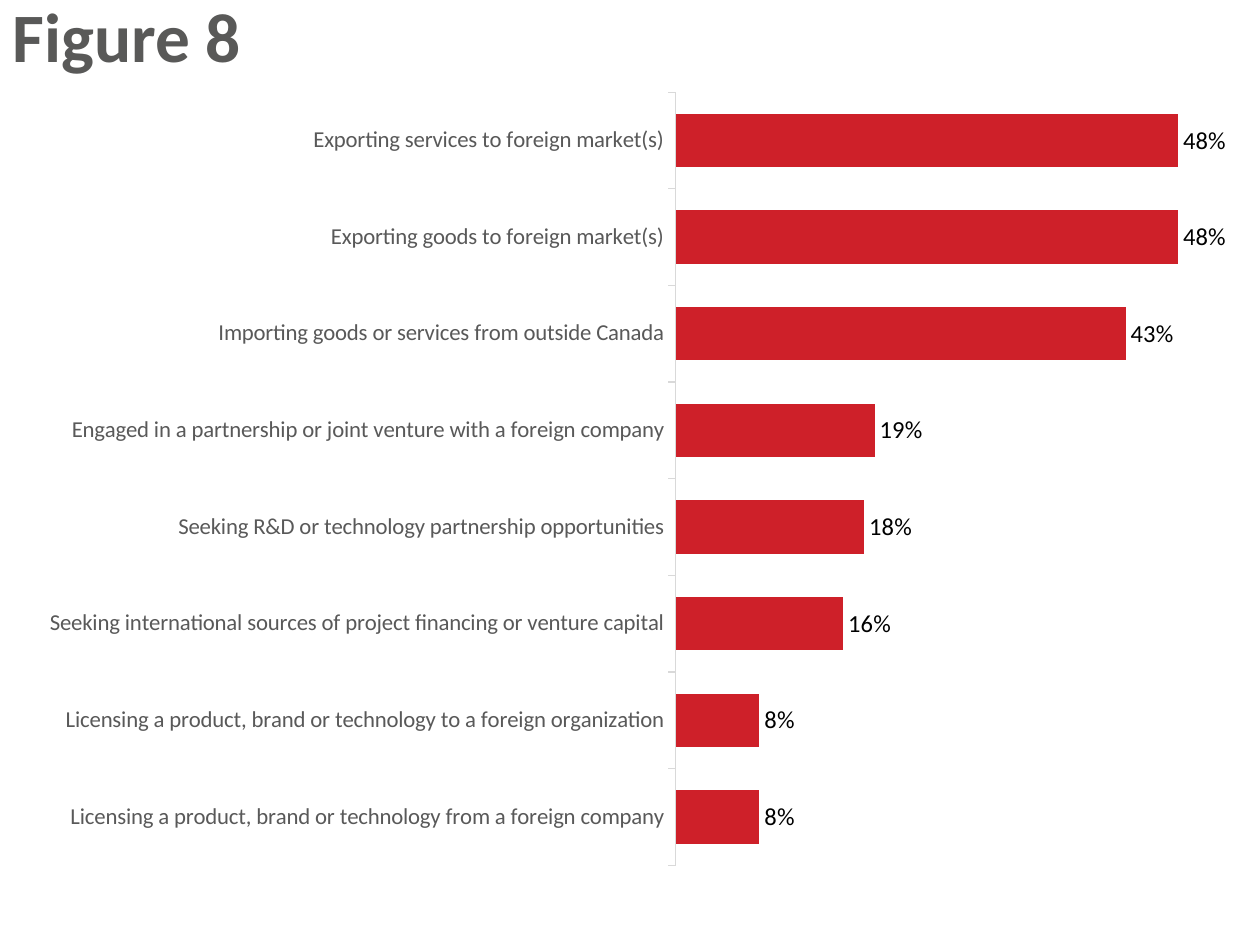
import dataclasses

import pptx
import pptx.chart.data
import pptx.dml.color
import pptx.enum.chart
import pptx.enum.text
import pptx.oxml
import pptx.oxml.ns
import pptx.util

Pt = pptx.util.Pt
TITLE_ONLY = 5

ACTIVITIES = {
    "Exporting services to foreign market(s)": 0.48,
    "Exporting goods to foreign market(s)": 0.48,
    "Importing goods or services from outside Canada": 0.43,
    "Engaged in a partnership or joint venture with a foreign company": 0.19,
    "Seeking R&D or technology partnership opportunities": 0.18,
    "Seeking international sources of project financing or venture capital": 0.16,
    "Licensing a product, brand or technology to a foreign organization": 0.08,
    "Licensing a product, brand or technology from a foreign company": 0.08,
}


@dataclasses.dataclass(frozen=True)
class Theme:
    font: str = "Calibri"
    title_color: str = "595958"
    category_color: str = "595959"
    label_color: str = "000000"
    axis_color: str = "D9D9D9"
    bar_color: str = "CE2029"
    title_size: float = 39.6
    category_size: float = 13
    label_size: float = 14
    chart_size: float = 10


def rgb(value):
    return pptx.dml.color.RGBColor.from_string(value)


def format_font(font, name, size, color, bold=False):
    font.name = name
    font.size = Pt(size)
    font.bold = bold
    font.color.rgb = rgb(color)


def write_text(text_frame, text, *, anchor, line_spacing, **font_format):
    text_frame.text = text
    text_frame.word_wrap = True
    text_frame.auto_size = pptx.enum.text.MSO_AUTO_SIZE.NONE
    text_frame.vertical_anchor = anchor
    paragraph = text_frame.paragraphs[0]
    paragraph.alignment = pptx.enum.text.PP_ALIGN.LEFT
    paragraph.line_spacing = line_spacing
    format_font(paragraph.runs[0].font, **font_format)


def set_inner_plot_layout(chart, left, top, width, height):
    """Fix the plot rectangle, given in fractions of the chart area."""
    plot_area = chart._chartSpace.chart.plotArea
    for layout in plot_area.findall(pptx.oxml.ns.qn("c:layout")):
        plot_area.remove(layout)
    plot_area.insert(0, pptx.oxml.parse_xml(
        f'<c:layout {pptx.oxml.ns.nsdecls("c")}><c:manualLayout>'
        '<c:layoutTarget val="inner"/><c:xMode val="edge"/><c:yMode val="edge"/>'
        f'<c:x val="{left}"/><c:y val="{top}"/><c:w val="{width}"/><c:h val="{height}"/>'
        '</c:manualLayout></c:layout>'))


class SlideBuilder:
    def __init__(self, slide, theme):
        self.slide = slide
        self.theme = theme

    def title(self, text, left, top, width, height):
        shape = self.slide.shapes.title
        shape.left, shape.top = Pt(left), Pt(top)
        shape.width, shape.height = Pt(width), Pt(height)
        write_text(shape.text_frame, text,
                   anchor=pptx.enum.text.MSO_ANCHOR.MIDDLE, line_spacing=0.9,
                   name=self.theme.font, size=self.theme.title_size,
                   color=self.theme.title_color, bold=True)

    def bar_chart(self, values, left, top, width, height):
        theme = self.theme
        chart_data = pptx.chart.data.CategoryChartData(number_format="0%")
        chart_data.categories = list(values)
        chart_data.add_series("Series 1", list(values.values()))
        chart = self.slide.shapes.add_chart(
            pptx.enum.chart.XL_CHART_TYPE.BAR_CLUSTERED,
            Pt(left), Pt(top), Pt(width), Pt(height), chart_data).chart
        chart.has_legend = False
        chart.has_title = False
        format_font(chart.font, theme.font, theme.chart_size, theme.label_color)
        set_inner_plot_layout(chart, 0.521, 0.013, 0.476, 0.974)
        self.format_axes(chart)
        self.format_bars(chart.plots[0])

    def format_axes(self, chart):
        theme = self.theme
        category_axis = chart.category_axis
        category_axis.reverse_order = True
        category_axis.has_major_gridlines = False
        category_axis.major_tick_mark = pptx.enum.chart.XL_TICK_MARK.OUTSIDE
        category_axis.format.line.color.rgb = rgb(theme.axis_color)
        category_axis.format.line.width = Pt(0.75)
        format_font(category_axis.tick_labels.font, theme.font,
                    theme.category_size, theme.category_color)

        value_axis = chart.value_axis
        value_axis.minimum_scale = 0
        value_axis.maximum_scale = 0.6
        value_axis.has_major_gridlines = False
        value_axis.major_tick_mark = pptx.enum.chart.XL_TICK_MARK.OUTSIDE
        value_axis.tick_label_position = pptx.enum.chart.XL_TICK_LABEL_POSITION.NONE
        value_axis.format.line.fill.background()

    def format_bars(self, plot):
        theme = self.theme
        plot.gap_width = 81
        plot.vary_by_categories = False
        series = plot.series[0]
        series.format.fill.solid()
        series.format.fill.fore_color.rgb = rgb(theme.bar_color)
        series.invert_if_negative = False

        labels = series.data_labels
        labels.show_value = True
        labels.number_format = "0%"
        labels.number_format_is_linked = False
        labels.position = pptx.enum.chart.XL_LABEL_POSITION.OUTSIDE_END
        format_font(labels.font, theme.font, theme.label_size, theme.label_color)


def main():
    presentation = pptx.Presentation()
    presentation.slide_width, presentation.slide_height = Pt(720), Pt(540)
    slide = presentation.slides.add_slide(presentation.slide_layouts[TITLE_ONLY])
    builder = SlideBuilder(slide, Theme())
    builder.title("Figure 8", 0, 0, 729.4, 46)
    builder.bar_chart(ACTIVITIES, -6.5, 46.8, 753.8, 453.6)
    presentation.save("out.pptx")


if __name__ == "__main__":
    main()
